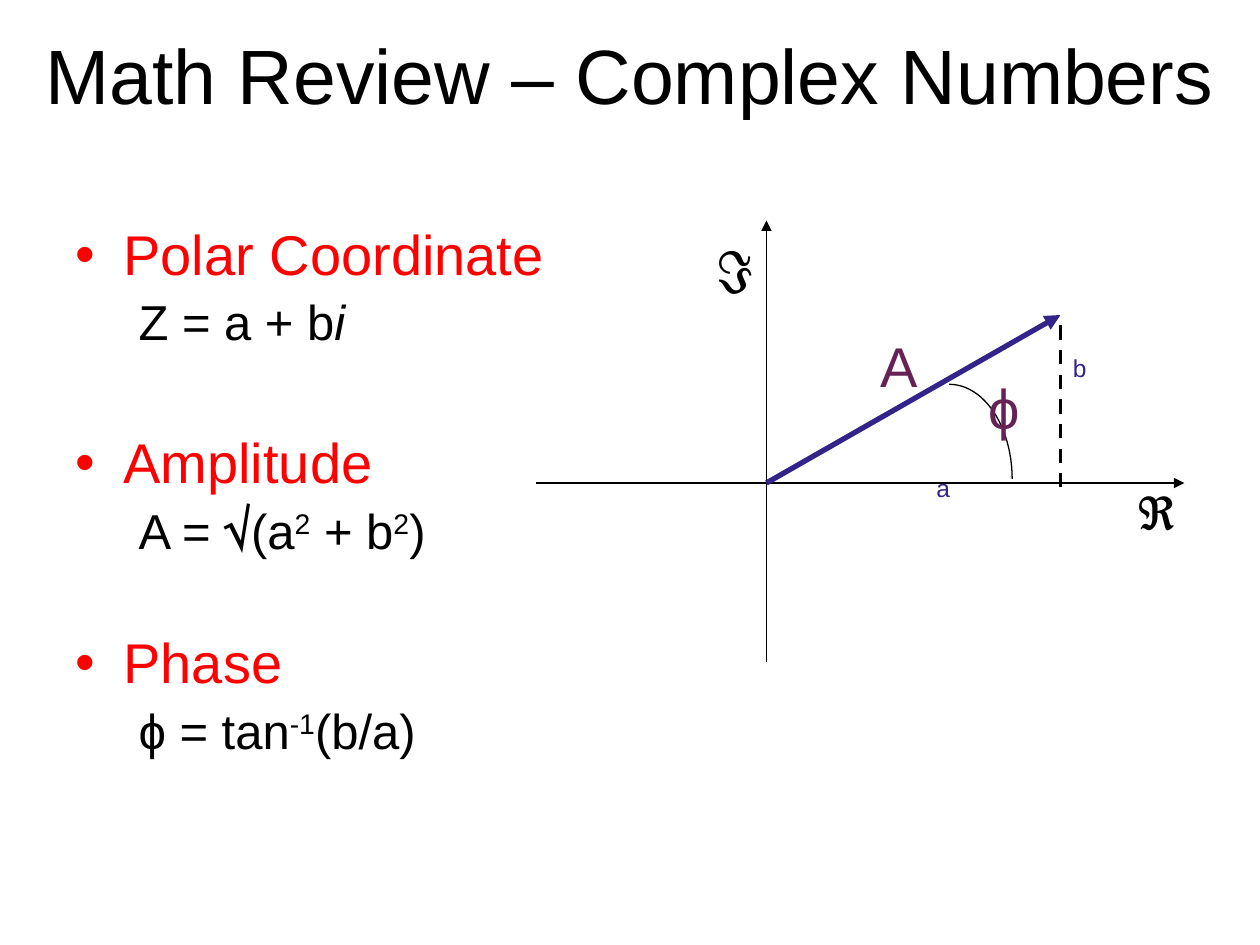
from dataclasses import dataclass
from math import cos, pi, sin

from lxml.etree import SubElement
from pptx import Presentation
from pptx.dml.color import RGBColor
from pptx.enum.dml import MSO_LINE
from pptx.enum.shapes import MSO_CONNECTOR
from pptx.enum.text import MSO_ANCHOR, MSO_AUTO_SIZE, PP_ALIGN
from pptx.oxml.ns import qn
from pptx.util import Inches, Pt


@dataclass(frozen=True)
class Theme:
    black: str = "000000"
    heading: str = "FF0000"
    vector: str = "322488"
    polar: str = "672255"
    font: str = "Arial"
    root_font: str = "TeX Gyre Bonum"
    title_size: int = 44
    large: int = 32
    formula: int = 28
    small: int = 14


THEME = Theme()
UNIT = Inches(1) / 12  # the slide is a grid of 120 columns by 90 rows
ORIGIN = (73, 46)
VECTOR_TIP = (101, 30)


def grid(*counts):
    return [round(count * UNIT) for count in counts]


def add_text(paragraph, text, size=THEME.large, color=THEME.black,
             font=THEME.font, italic=False, raised=False):
    run = paragraph.add_run()
    run.text = text
    run.font.size = Pt(size)
    run.font.name = font
    run.font.italic = italic
    run.font.color.rgb = RGBColor.from_string(color)
    if raised:
        run.font._element.set("baseline", "30000")


def place(shape, left, top, width, height):
    shape.left, shape.top, shape.width, shape.height = grid(left, top, width, height)


def add_title(slide, text):
    title = slide.shapes.title
    place(title, 0, 0, 120, 14)
    frame = title.text_frame
    frame.auto_size = MSO_AUTO_SIZE.NONE
    frame.vertical_anchor = MSO_ANCHOR.MIDDLE
    paragraph = frame.paragraphs[0]
    paragraph.alignment = PP_ALIGN.CENTER
    add_text(paragraph, text, size=THEME.title_size)


def format_item(paragraph, margin, indent, space_before, bullet=None):
    paragraph.line_spacing = 0.9
    paragraph.space_before = Pt(space_before)
    properties = paragraph._p.get_or_add_pPr()
    properties.set("marL", str(Inches(margin)))
    properties.set("indent", str(Inches(indent)))
    if bullet:
        SubElement(properties, qn("a:buChar")).set("char", bullet)
    else:
        SubElement(properties, qn("a:buNone"))


def add_topics(slide, topics):
    """Each topic is the gap above it, a heading and the runs of its formula."""
    body = slide.placeholders[1]
    place(body, 6, 21, 108, 59.4)
    frame = body.text_frame
    frame.auto_size = MSO_AUTO_SIZE.NONE
    for number, (gap, heading, formula) in enumerate(topics):
        paragraph = frame.add_paragraph() if number else frame.paragraphs[0]
        format_item(paragraph, 0.38, -0.38, gap, bullet="•")
        add_text(paragraph, heading, color=THEME.heading)

        paragraph = frame.add_paragraph()
        paragraph.level = 1
        format_item(paragraph, 0.81, -0.31, 6.4)
        for text, style in formula:
            add_text(paragraph, text, size=THEME.formula, **style)


def add_line(slide, start, end, color=THEME.black, width=0.75, dash=None, arrow=True):
    line = slide.shapes.add_connector(MSO_CONNECTOR.STRAIGHT, *grid(*start, *end))
    line.line.color.rgb = RGBColor.from_string(color)
    line.line.width = Pt(width)
    if dash:
        line.line.dash_style = dash
    if arrow:
        SubElement(line.line._get_or_add_ln(), qn("a:tailEnd")).set("type", "triangle")
    SubElement(line._element.spPr, qn("a:effectLst"))


def add_label(slide, text, left, top, width, height, **style):
    box = slide.shapes.add_textbox(*grid(left, top, width, height))
    box.text_frame.word_wrap = False
    add_text(box.text_frame.paragraphs[0], text, **style)


def add_angle_arc(slide, center, radii, steps=24):
    """Quarter ellipse from the top of the center to its right."""
    points = []
    for step in range(steps + 1):
        angle = pi / 2 * step / steps
        points.append(grid(center[0] + radii[0] * sin(angle),
                           center[1] - radii[1] * cos(angle)))
    builder = slide.shapes.build_freeform(*points[0])
    builder.add_line_segments(points[1:], close=False)
    arc = builder.convert_to_shape()
    arc.shadow.inherit = False
    arc.fill.background()
    arc.line.color.rgb = RGBColor.from_string(THEME.black)
    arc.line.width = Pt(0.75)


def add_complex_plane(slide):
    # Axes
    column, row = ORIGIN
    add_line(slide, (column, 63), (column, 21))
    add_line(slide, (51, row), (112.8, row))

    # Vector and its imaginary part
    add_line(slide, ORIGIN, VECTOR_TIP, color=THEME.vector, width=3)
    add_line(slide, (VECTOR_TIP[0], 31), (VECTOR_TIP[0], 46.8), width=2,
             dash=MSO_LINE.DASH, arrow=False)
    part = {"size": THEME.small, "color": THEME.vector}
    add_label(slide, "a", 88, 44.5, 8.2, 10.5, **part)
    add_label(slide, "b", VECTOR_TIP[0], 33, 8.5, 10.5, **part)

    # Axis names, amplitude and phase
    add_label(slide, "ℑ", 67, 21.7, 6.1, 7.6)
    add_label(slide, "ℜ", 107, 44.6, 6.7, 7.6)
    add_label(slide, "A", 82.7, 31, 6.2, 7.6, color=THEME.polar)
    add_angle_arc(slide, center=(90.4, 45.6), radii=(6, 9))
    add_label(slide, "ϕ", 93, 35, 5.6, 7.6, color=THEME.polar)


def main():
    presentation = Presentation()
    presentation.slide_width, presentation.slide_height = grid(120, 90)
    slide = presentation.slides.add_slide(presentation.slide_layouts[1])

    plain, raised = {}, {"raised": True}
    add_title(slide, "Math Review – Complex Numbers")
    add_topics(slide, [
        (7.4, "Polar Coordinate", [("Z = a + b", plain), ("i", {"italic": True})]),
        (48, "Amplitude", [("A = ", plain), ("√", {"font": THEME.root_font}),
                           ("(a", plain), ("2", raised), (" + b", plain),
                           ("2", raised), (")", plain)]),
        (43, "Phase", [("ϕ = tan", plain), ("-1", raised), ("(b/a)", plain)]),
    ])
    add_complex_plane(slide)
    presentation.save("out.pptx")


if __name__ == "__main__":
    main()
